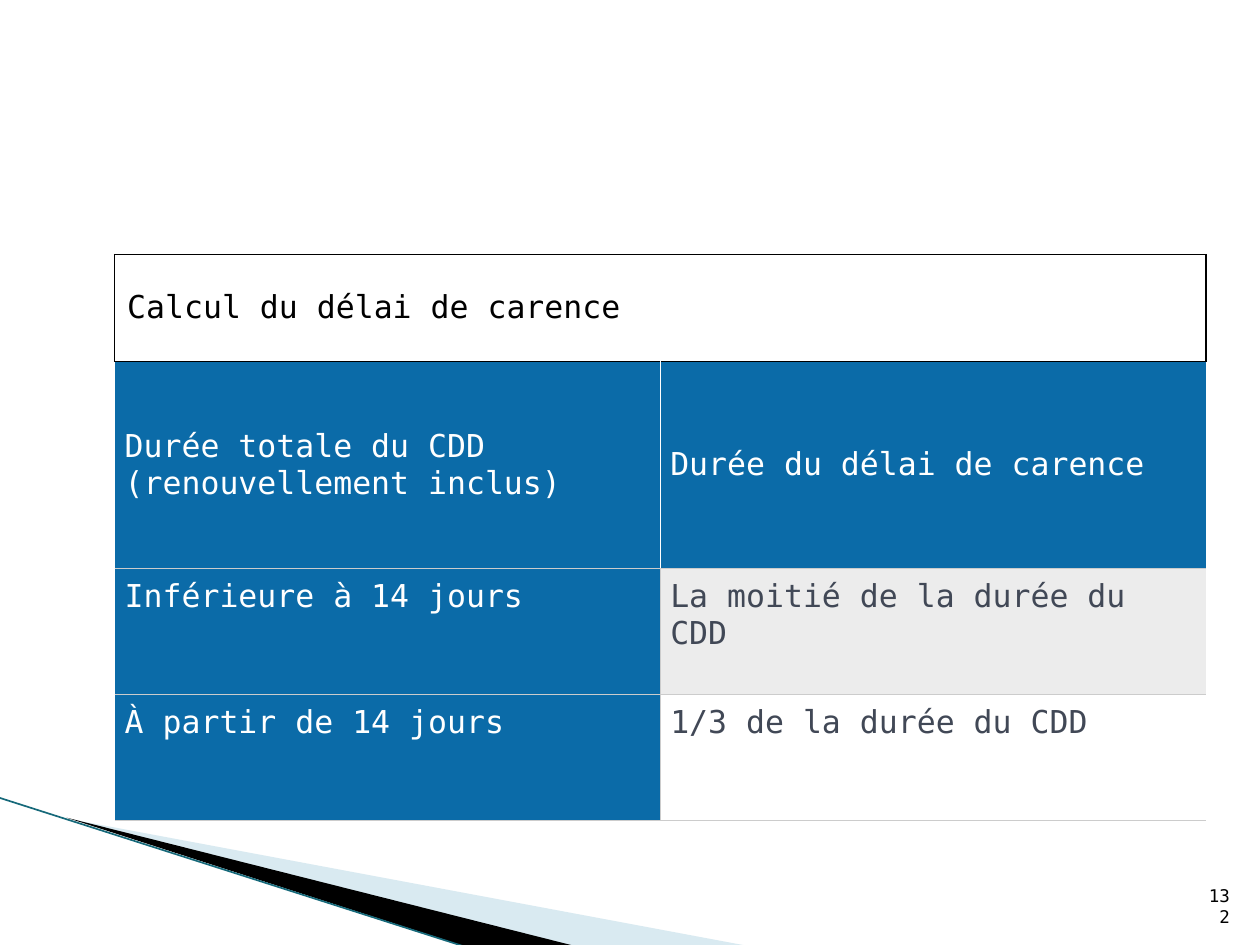
from lxml import etree
from pptx import Presentation
from pptx.dml.color import RGBColor
from pptx.enum.shapes import MSO_CONNECTOR
from pptx.enum.text import MSO_ANCHOR, PP_ALIGN
from pptx.oxml.ns import qn
from pptx.util import Inches, Pt

STRAIGHT = MSO_CONNECTOR.STRAIGHT
TOP, MIDDLE, BOTTOM = MSO_ANCHOR.TOP, MSO_ANCHOR.MIDDLE, MSO_ANCHOR.BOTTOM
RIGHT = PP_ALIGN.RIGHT

FONT = "DejaVu Sans Mono"
BLACK, WHITE = "000000", "FFFFFF"
BLUE, PALE_GREY, SLATE, RULE = "0B6BA8", "ECECEC", "414856", "CCCCCC"
PALE_BLUE, TEAL = "A0CBDC", "16697A"
NO_STYLE = "{2D5ABB26-0587-4C30-8999-92F81FD0307C}"

COLUMN_WIDTH = 4.33
ROW_HEIGHTS = [0.85, 1.64, 1, 1]
HEADING = "Calcul du délai de carence"
COLUMN_TITLES = ["Durée totale du CDD (renouvellement inclus)",
                 "Durée du délai de carence"]
DURATIONS = [("Inférieure à 14 jours", "La moitié de la durée du CDD", PALE_GREY),
             ("À partir de 14 jours", "1/3 de la durée du CDD", None)]


def rgb(color):
    return RGBColor.from_string(color)


def set_text(frame, text, size, color):
    frame.text = text
    font = frame.paragraphs[0].font
    font.name, font.size = FONT, Pt(size)
    font.color.rgb = rgb(color)


def add_wedge(slide, points, color, opacity=100):
    (left, top), *others = [(Inches(x), Inches(y)) for x, y in points]
    builder = slide.shapes.build_freeform(left, top)
    builder.add_line_segments(others, close=True)
    wedge = builder.convert_to_shape()
    wedge.shadow.inherit = False
    wedge.line.fill.background()
    wedge.fill.solid()
    wedge.fill.fore_color.rgb = rgb(color)
    if opacity < 100:
        srgb = wedge.fill._xPr.find(".//" + qn("a:srgbClr"))
        etree.SubElement(srgb, qn("a:alpha"), val=str(opacity * 1000))


def add_corner_decoration(slide):
    add_wedge(slide, [(0.55, 6.5), (5.95, 7.51), (4.56, 7.51)], PALE_BLUE, 40)
    add_wedge(slide, [(0.53, 6.49), (4.57, 7.51), (3.72, 7.52)], BLACK)
    edge = slide.shapes.add_connector(
        STRAIGHT, Inches(-0.01), Inches(6.33), Inches(3.71), Inches(7.52))
    edge.line.color.rgb = rgb(TEAL)
    edge.line.width = Pt(0.95)
    etree.SubElement(edge._element.spPr, qn("a:effectLst"))


def set_borders(cell, borders):
    """Draw borders given as {side: (colour, points)}, sides being L, R, T and B."""
    properties = cell._tc.get_or_add_tcPr()
    for side in "LRTB":
        if side in borders:
            color, width = borders[side]
            line = etree.SubElement(properties, qn("a:ln" + side), w=str(Pt(width)))
            fill = etree.SubElement(line, qn("a:solidFill"))
            etree.SubElement(fill, qn("a:srgbClr"), val=color)


def fill_cell(cell, text, color, background, borders, anchor=TOP, inset=0.08):
    set_borders(cell, borders)
    if background:
        cell.fill.solid()
        cell.fill.fore_color.rgb = rgb(background)
    else:
        cell.fill.background()
    cell.vertical_anchor = anchor
    cell.margin_left = cell.margin_right = Inches(inset)
    cell.margin_top = cell.margin_bottom = Inches(min(inset, 0.08))
    set_text(cell.text_frame, text, 18, color)


def add_waiting_period_table(slide):
    frame = slide.shapes.add_table(
        len(ROW_HEIGHTS), 2, Inches(0.91), Inches(2.02),
        Inches(2 * COLUMN_WIDTH), Inches(sum(ROW_HEIGHTS)))
    table = frame.table
    table.first_row = table.horz_banding = False
    table._tbl.tblPr.find(qn("a:tableStyleId")).text = NO_STYLE
    for column in table.columns:
        column.width = Inches(COLUMN_WIDTH)
    for row, height in zip(table.rows, ROW_HEIGHTS):
        row.height = Inches(height)

    frame_line, white_line, rule = (BLACK, 1), (WHITE, 0.75), (RULE, 0.75)
    heading = table.cell(0, 0)
    heading.merge(table.cell(0, 1))
    fill_cell(heading, HEADING, BLACK, None,
              dict.fromkeys("LRT", frame_line), MIDDLE, 0.1)
    set_borders(table.cell(0, 1), {"R": frame_line, "T": frame_line})

    title_borders = [{"R": white_line, "T": frame_line, "B": rule},
                     {"L": white_line, "B": rule}]
    for column, (title, borders) in enumerate(zip(COLUMN_TITLES, title_borders)):
        fill_cell(table.cell(1, column), title, WHITE, BLUE, borders, MIDDLE)

    for row, (duration, waiting, background) in enumerate(DURATIONS, start=2):
        fill_cell(table.cell(row, 0), duration, WHITE, BLUE,
                  dict.fromkeys("RTB", rule))
        fill_cell(table.cell(row, 1), waiting, SLATE, background,
                  dict.fromkeys("LTB", rule))


def add_slide_number(slide, number):
    box = slide.shapes.add_textbox(
        Inches(9.46), Inches(7.01), Inches(0.4), Inches(0.4))
    frame = box.text_frame
    frame.word_wrap = True
    frame.vertical_anchor = BOTTOM
    set_text(frame, number, 10, BLACK)
    frame.paragraphs[0].alignment = RIGHT


def main():
    presentation = Presentation()
    presentation.slide_width, presentation.slide_height = Inches(10), Inches(7.5)
    slide = presentation.slides.add_slide(presentation.slide_layouts[6])
    add_corner_decoration(slide)
    add_waiting_period_table(slide)
    add_slide_number(slide, "132")
    presentation.save("out.pptx")


if __name__ == "__main__":
    main()
